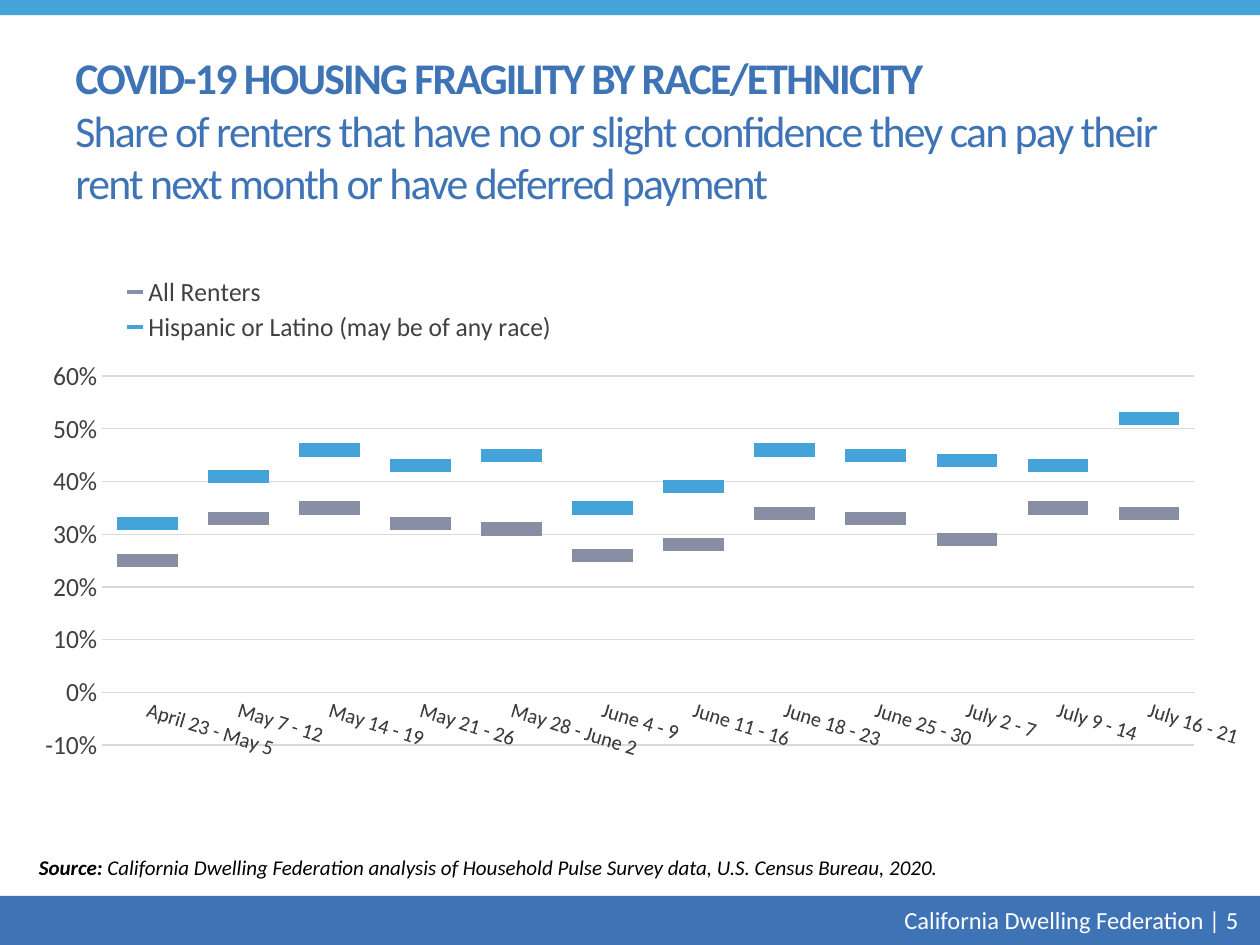
from dataclasses import dataclass

from lxml import etree
from pptx import Presentation
from pptx import util as u
from pptx.chart.data import CategoryChartData
from pptx.dml.color import RGBColor
from pptx.enum import chart as ch, shapes, text
from pptx.oxml import ns


@dataclass(frozen=True)
class Theme:
    font: str = "Calibri"
    navy: str = "3E74B6"
    sky: str = "44A4DA"
    slate: str = "888EA4"
    white: str = "FFFFFF"
    black: str = "000000"
    label: str = "404040"
    grid: str = "D9D9D9"
    title: int = 25
    chart: int = 15
    footer: int = 14
    small: int = 12


T = Theme()
ORG = "California Dwelling Federation"
WEEKS = ["April 23 - May 5", "May 7 - 12", "May 14 - 19", "May 21 - 26",
         "May 28 - June 2", "June 4 - 9", "June 11 - 16", "June 18 - 23",
         "June 25 - 30", "July 2 - 7", "July 9 - 14", "July 16 - 21"]
SERIES = [
    ("All Renters", T.slate,
     [.25, .33, .35, .32, .31, .26, .28, .34, .33, .29, .35, .34]),
    ("Hispanic or Latino (may be of any race)", T.sky,
     [.32, .41, .46, .43, .45, .35, .39, .46, .45, .44, .43, .52]),
]


def rgb(color):
    return RGBColor.from_string(color)


def style_font(f, size, color, bold=False, italic=False):
    f.name, f.size, f.bold, f.italic = T.font, u.Pt(size), bold, italic
    f.color.rgb = rgb(color)


def add_text(s, box, lines, size, color, align=text.PP_ALIGN.LEFT,
             anchor=text.MSO_ANCHOR.MIDDLE, italic=False, spacing=None):
    tf = s.shapes.add_textbox(*map(u.Inches, box)).text_frame
    tf.word_wrap, tf.vertical_anchor = True, anchor
    p = tf.paragraphs[0]
    p.alignment = align
    for i, runs in enumerate(lines):
        if i:
            p.add_line_break()
        for words, bold in runs:
            r = p.add_run()
            r.text = words
            style_font(r.font, size, color, bold, italic)
            if spacing is not None:
                r.font._element.set("spc", str(spacing))


def add_band(s, box, color):
    sp = s.shapes.add_shape(shapes.MSO_SHAPE.RECTANGLE, *map(u.Inches, box))
    sp.shadow.inherit = False
    sp.fill.solid()
    sp.fill.fore_color.rgb = rgb(color)
    sp.line.fill.background()


def add_footer(s, box):
    x, y, w, h = box
    add_band(s, box, T.navy)
    add_text(s, (x + w - 3.59, y + .01, 3.52, .36), [[(f"{ORG} | 5", False)]],
             T.footer, T.white, align=text.PP_ALIGN.RIGHT)


def manual_layout(x, y, w, h, inner=False):
    layout = etree.Element(ns.qn("c:layout"))
    manual = etree.SubElement(layout, ns.qn("c:manualLayout"))
    settings = [("layoutTarget", "inner")] if inner else []
    settings += [("xMode", "edge"), ("yMode", "edge"),
                 ("x", x), ("y", y), ("w", w), ("h", h)]
    for name, value in settings:
        etree.SubElement(manual, ns.qn(f"c:{name}")).set("val", str(value))
    return layout


def place_plot(chart, *box):
    area = chart._chartSpace.chart.plotArea
    for old in area.findall(ns.qn("c:layout")):
        area.remove(old)
    area.insert(0, manual_layout(*box, inner=True))


def place_legend(legend, *box):
    el = legend._element
    for old in el.findall(ns.qn("c:layout")):
        el.remove(old)
    el.find(ns.qn("c:legendPos")).addnext(manual_layout(*box))


def style_axes(chart):
    cat, val = chart.category_axis, chart.value_axis
    for axis, size in ((cat, T.small), (val, T.chart)):
        axis.major_tick_mark = axis.minor_tick_mark = ch.XL_TICK_MARK.NONE
        style_font(axis.tick_labels.font, size, T.label)
    cat.has_major_gridlines = False
    val.has_major_gridlines = True
    for line in (cat.format.line, val.major_gridlines.format.line):
        line.color.rgb, line.width = rgb(T.grid), u.Pt(.75)
    cat._element.txPr.bodyPr.set("rot", str(17 * 60000))
    val.format.line.fill.background()
    val.minimum_scale, val.maximum_scale, val.major_unit = -.1, .6, .1
    val.tick_labels.number_format = "0%"
    val.tick_labels.number_format_is_linked = False


def add_share_chart(s, box):
    data = CategoryChartData(number_format="0%")
    data.categories = WEEKS
    for name, _, values in SERIES:
        data.add_series(name, values)
    chart = s.shapes.add_chart(ch.XL_CHART_TYPE.LINE_MARKERS,
                               *map(u.Inches, box), data).chart
    chart.has_title = False
    style_font(chart.font, T.chart, T.label)
    plot = chart.plots[0]
    plot.vary_by_categories = False
    for series, (_, color, _) in zip(plot.series, SERIES):
        series.smooth = False
        series.format.line.fill.background()
        marker = series.marker
        marker.style, marker.size = ch.XL_MARKER_STYLE.DASH, 35
        marker.format.fill.solid()
        marker.format.fill.fore_color.rgb = rgb(color)
        marker.format.line.fill.background()
    style_axes(chart)
    place_plot(chart, .07, .22, .92, .61)
    chart.has_legend = True
    legend = chart.legend
    legend.position = ch.XL_LEGEND_POSITION.BOTTOM
    legend.include_in_layout = True
    style_font(legend.font, T.chart, T.label)
    place_legend(legend, .07, .05, .4, .12)


def main():
    prs = Presentation()
    prs.slide_width, prs.slide_height = u.Inches(10), u.Inches(7.5)
    s = prs.slides.add_slide(prs.slide_layouts[6])
    add_band(s, (0, 0, 10, .12), T.sky)
    add_footer(s, (0, 7.11, 10, .39))
    add_text(s, (.5, .3, 9.15, 1.46),
             [[("COVID-19 HOUSING FRAGILITY BY RACE/ETHNICITY", True)],
              [("Share of renters that have no or slight confidence they can "
                "pay their rent next month or have deferred payment", False)]],
             T.title, T.navy, spacing=-100)
    add_text(s, (.21, 6.73, 9.26, .3),
             [[("Source: ", True),
               (f"{ORG} analysis of Household Pulse Survey data, "
                "U.S. Census Bureau, 2020.", False)]],
             T.small, T.black, anchor=text.MSO_ANCHOR.TOP, italic=True)
    add_share_chart(s, (.15, 1.93, 9.7, 4.8))
    prs.save("out.pptx")


if __name__ == "__main__":
    main()
